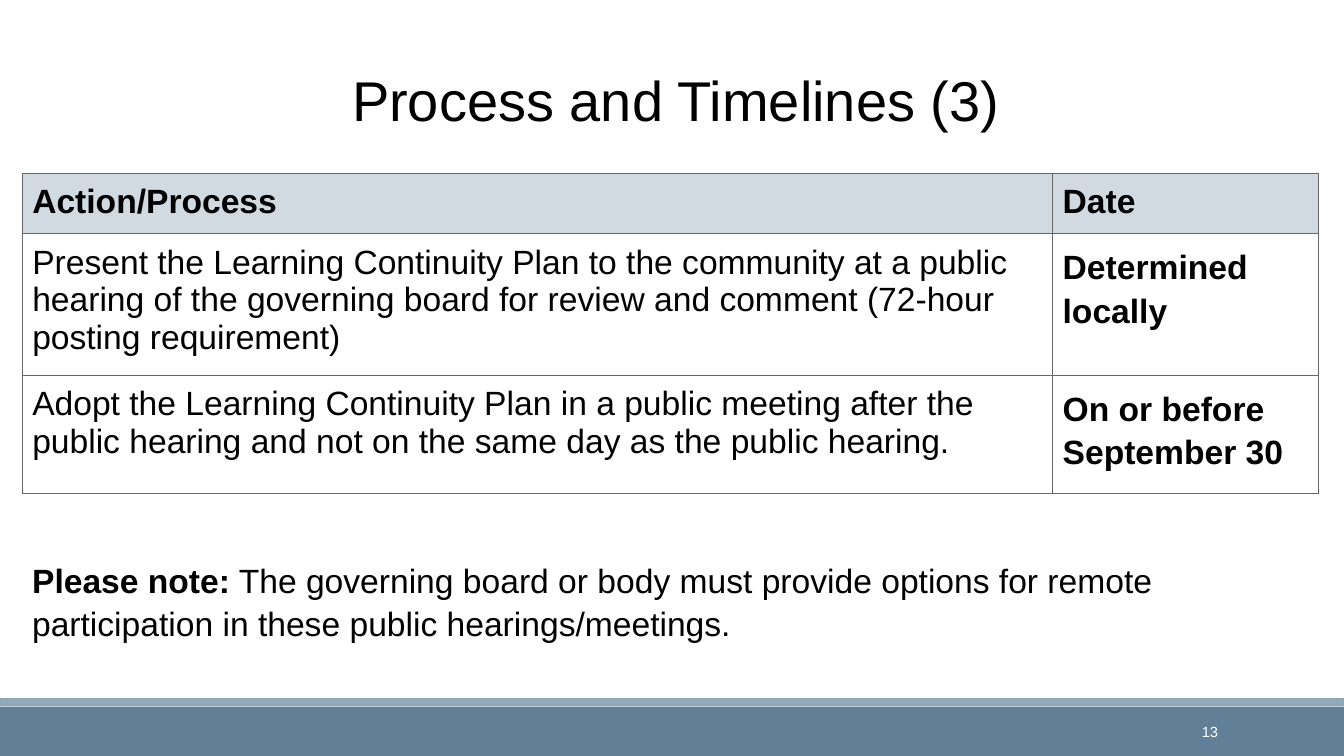
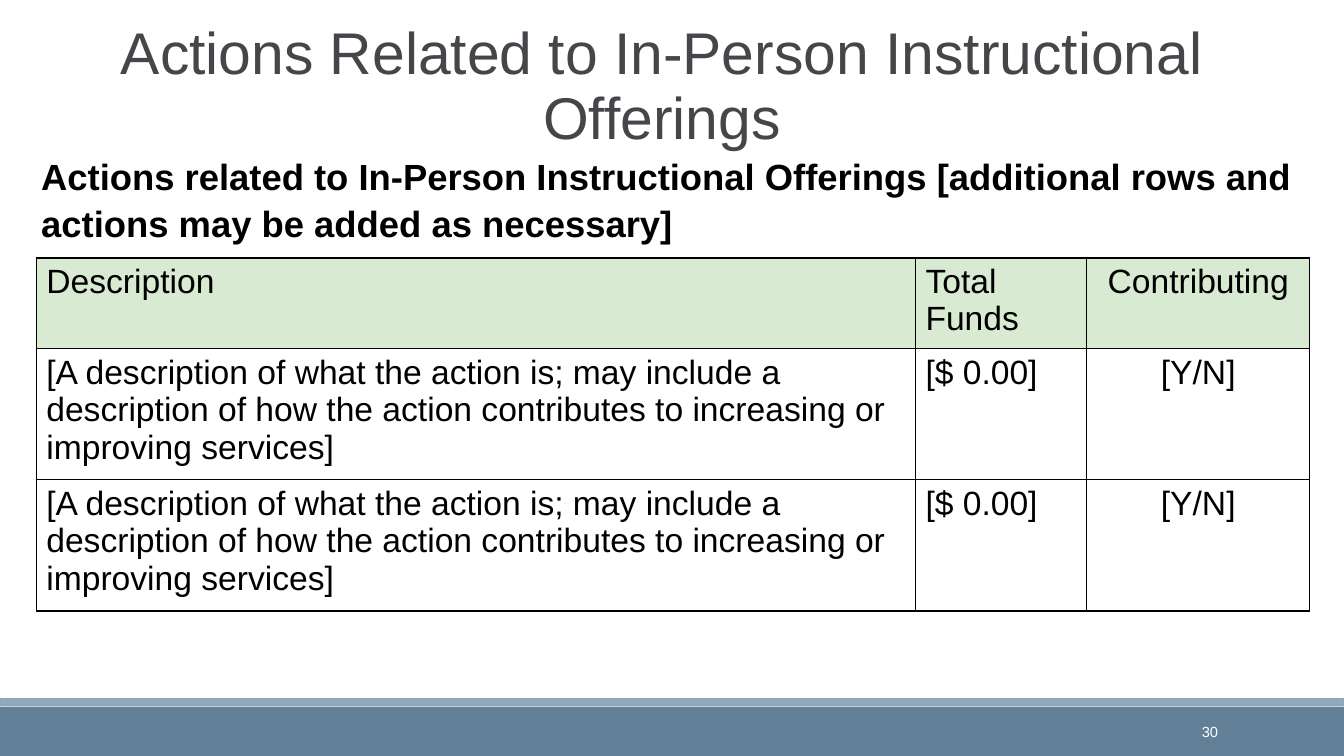
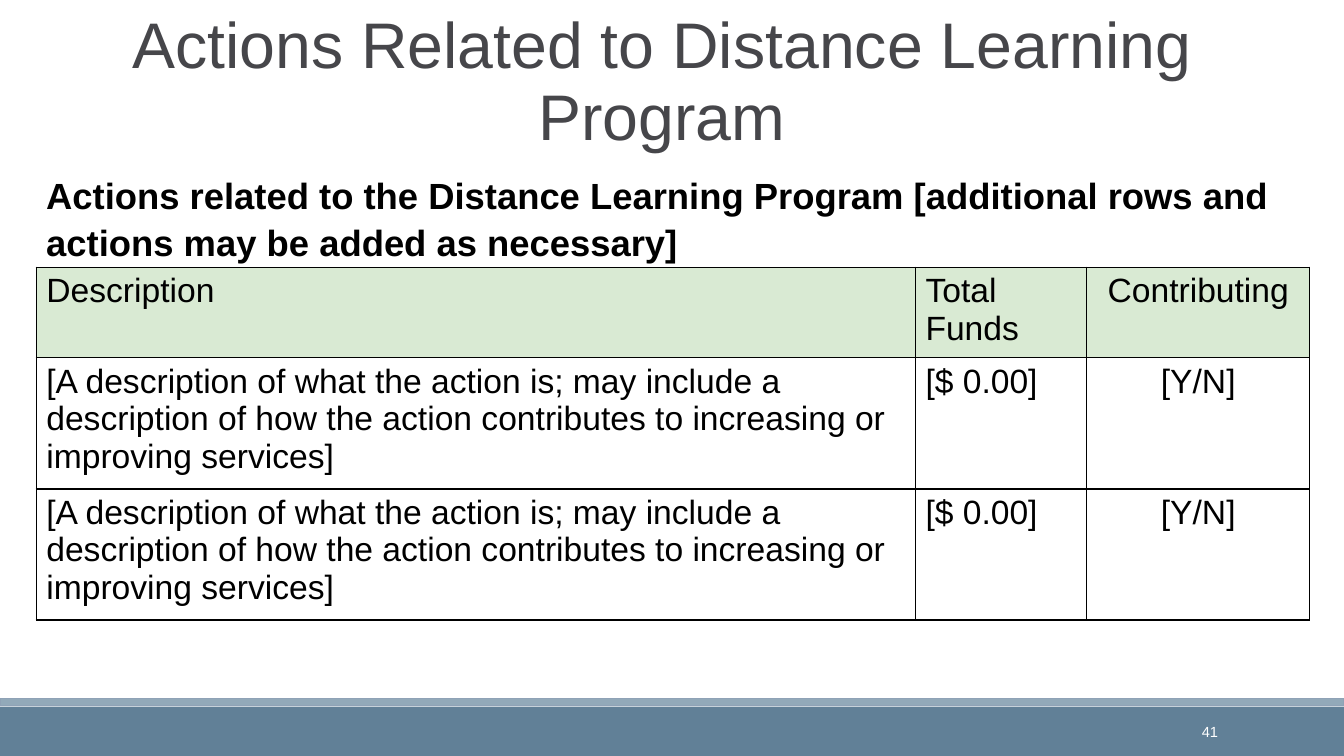
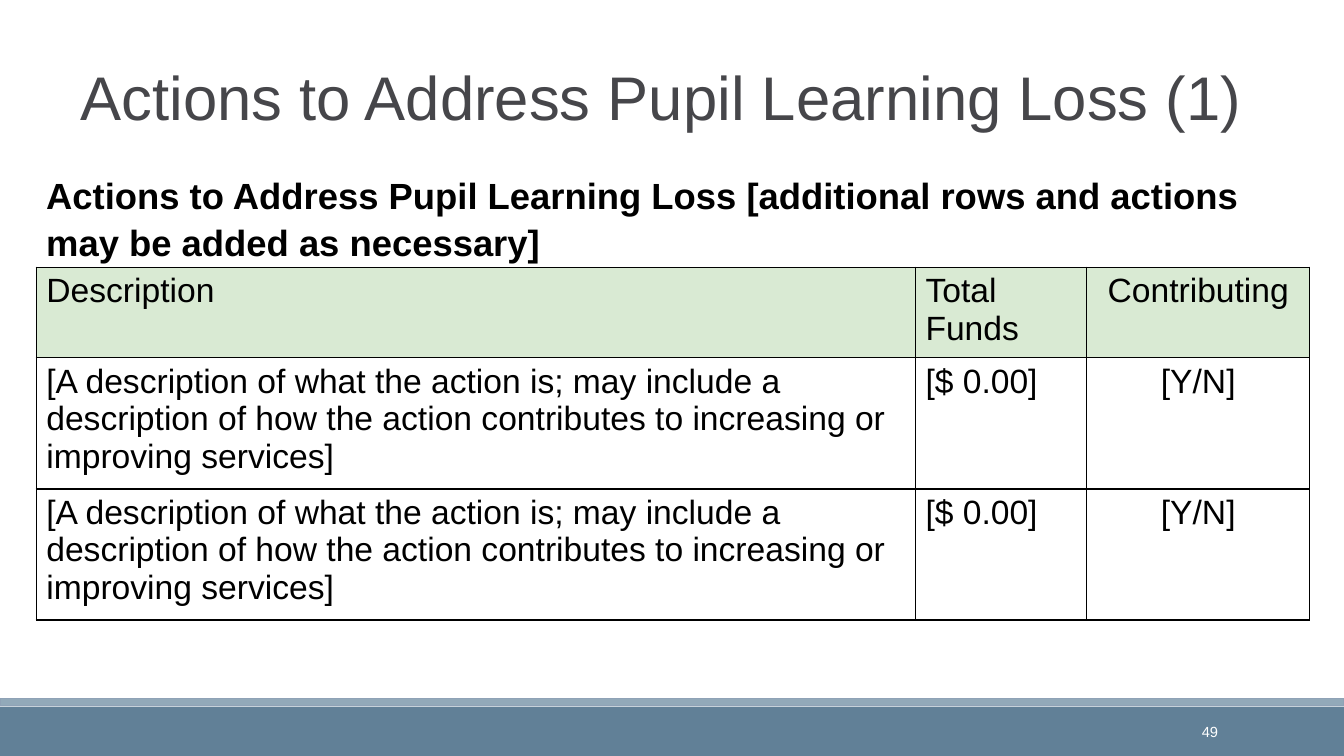
from lxml import etree
from pptx import Presentation
from pptx.dml.color import RGBColor
from pptx.enum import shapes, text
from pptx.oxml import ns
from pptx.util import Inches, Pt

BLACK = RGBColor(0x00, 0x00, 0x00)
WHITE = RGBColor(0xFF, 0xFF, 0xFF)
CHARCOAL = RGBColor(0x46, 0x46, 0x4A)
GREY = RGBColor(0x66, 0x66, 0x66)
SLATE = RGBColor(0x61, 0x80, 0x97)
PALE_SLATE = RGBColor(0x92, 0xA9, 0xB9)
BAND_LINE = RGBColor(0x8F, 0xA2, 0xB6)
HEADER_BLUE = RGBColor(0xD1, 0xD9, 0xE1)
HEADER_GREEN = RGBColor(0xD9, 0xEA, 0xD3)

LEFT, CENTER, RIGHT = text.PP_ALIGN.LEFT, text.PP_ALIGN.CENTER, text.PP_ALIGN.RIGHT
TOP, MIDDLE, BOTTOM = text.MSO_ANCHOR.TOP, text.MSO_ANCHOR.MIDDLE, text.MSO_ANCHOR.BOTTOM


def write(frame, runs, size, color=BLACK, align=LEFT, spacing=None):
    """Fill the first paragraph with (wording, bold) runs."""
    frame.word_wrap = True
    paragraph = frame.paragraphs[0]
    paragraph.alignment = align
    if spacing:
        paragraph.line_spacing = spacing
    for wording, bold in runs:
        run = paragraph.add_run()
        run.text = wording
        run.font.color.rgb = color
        formats = {"name": "Arial", "size": Pt(size), "bold": bold}
        for name, value in formats.items():
            setattr(run.font, name, value)


def add_text(slide, place, runs, size, anchor=TOP, inset=0.05, **style):
    shape = slide.shapes.add_textbox(*map(Inches, place))
    frame = shape.text_frame
    frame.vertical_anchor = anchor
    frame.margin_top = frame.margin_bottom = Inches(inset)
    write(frame, runs, size, **style)


# Table kinds
timeline_table = {
    "columns": [10.22, 2.64], "rows": [0.57, 1.31, 1.17],
    "header": HEADER_BLUE, "border": GREY, "border_width": 0.75, "inset": 0.1,
    "aligns": [LEFT, LEFT], "bold_header": True, "bold_columns": [1],
    "cells": [
        ["Action/Process", "Date"],
        ["Present the Learning Continuity Plan to the community at a public hearing of the "
         "governing board for review and comment (72-hour posting requirement)",
         "Determined locally"],
        ["Adopt the Learning Continuity Plan in a public meeting after the public hearing "
         "and not on the same day as the public hearing.",
         "On or before September 30"],
    ],
}
action_row = ["[A description of what the action is; may include a description of how the "
              "action contributes to increasing or improving services]", "[$ 0.00]", "[Y/N]"]
actions_table = {
    "columns": [8.72, 1.7, 2.21], "rows": [0.9, 1.3, 1.3],
    "header": HEADER_GREEN, "border": BLACK, "border_width": 1, "inset": 0.05,
    "aligns": [LEFT, LEFT, CENTER], "bold_header": False, "bold_columns": [],
    "cells": [["Description", "Total Funds", "Contributing"], action_row, action_row],
}

# Slide contents
added_rows = " [additional rows and actions may be added as necessary]"
pages = [
    {"number": "13", "title": "Process and Timelines (3)", "title_size": 40,
     "title_color": BLACK, "title_place": (0.31, 0.31, 12.78, 1.07),
     "body": [("Please note:", True),
              (" The governing board or body must provide options for remote participation "
               "in these public hearings/meetings.", False)],
     "body_size": 24, "body_inset": 0.1, "body_place": (0.22, 5.42, 12.78, 1.07),
     "table": timeline_table, "table_at": (0.22, 1.72)},
]
for number, title, size, height, lead, body_left, body_top, table_top in [
    ("30", "Actions Related to In-Person Instructional Offerings", 42, 1.25,
     "Actions related to In-Person Instructional Offerings", 0.31, 1.44, 2.56),
    ("41", "Actions Related to Distance Learning Program", 46, 1.27,
     "Actions related to the Distance Learning Program", 0.36, 1.63, 2.65),
    ("49", "Actions to Address Pupil Learning Loss (1)", 44, 1.07,
     "Actions to Address Pupil Learning Loss", 0.36, 1.63, 2.65),
]:
    pages.append({
        "number": number, "title": title, "title_size": size,
        "title_color": CHARCOAL, "title_place": (0.31, 0.31, 12.51, height),
        "body": [(lead + added_rows, True)],
        "body_size": 26, "body_inset": 0.05, "body_place": (body_left, body_top, 12.78, 0.98),
        "table": actions_table, "table_at": (0.36, table_top)})

presentation = Presentation()
presentation.slide_width, presentation.slide_height = Inches(13.33), Inches(7.5)

for page in pages:
    slide = presentation.slides.add_slide(presentation.slide_layouts[6])

    # Footer bands
    for top, height, fill, line in [(7.01, 0.49, SLATE, None),
                                    (6.93, 0.07, PALE_SLATE, BAND_LINE)]:
        band = slide.shapes.add_shape(shapes.MSO_SHAPE.RECTANGLE, 0, Inches(top),
                                      presentation.slide_width, Inches(height))
        band.shadow.inherit = False
        band.fill.solid()
        band.fill.fore_color.rgb = fill
        if line:
            band.line.color.rgb = line
            band.line.width = Pt(1.25)
        else:
            band.line.fill.background()

    # Title, body text and slide number
    add_text(slide, page["title_place"], [(page["title"], False)], page["title_size"],
             anchor=BOTTOM, color=page["title_color"], align=CENTER, spacing=0.92)
    add_text(slide, page["body_place"], page["body"], page["body_size"],
             inset=page["body_inset"], spacing=1.08)
    add_text(slide, (10.75, 7.06, 1.43, 0.4), [(page["number"], False)], 10.5,
             anchor=MIDDLE, color=WHITE, align=RIGHT)

    # Table
    kind = page["table"]
    left, top = page["table_at"]
    table = slide.shapes.add_table(
        len(kind["rows"]), len(kind["columns"]), Inches(left), Inches(top),
        Inches(sum(kind["columns"])), Inches(sum(kind["rows"]))).table
    table.horz_banding = False
    for column, width in zip(table.columns, kind["columns"]):
        column.width = Inches(width)
    for row_index, (row, height) in enumerate(zip(table.rows, kind["rows"])):
        row.height = Inches(height)
        for column_index, cell in enumerate(row.cells):
            is_header = row_index == 0
            bold_body = not is_header and column_index in kind["bold_columns"]
            cell.margin_top = cell.margin_bottom = Inches(kind["inset"])
            write(cell.text_frame,
                  [(kind["cells"][row_index][column_index],
                    bold_body or is_header and kind["bold_header"])],
                  24, align=kind["aligns"][column_index],
                  spacing=1.15 if bold_body else None)
            # Borders come before the fill in the cell properties
            properties = cell._tc.get_or_add_tcPr()
            for side in ("a:lnL", "a:lnR", "a:lnT", "a:lnB"):
                border = etree.SubElement(properties, ns.qn(side),
                                          w=str(Pt(kind["border_width"])))
                solid = etree.SubElement(border, ns.qn("a:solidFill"))
                etree.SubElement(solid, ns.qn("a:srgbClr"), val=str(kind["border"]))
            if is_header:
                cell.fill.solid()
                cell.fill.fore_color.rgb = kind["header"]
            else:
                cell.fill.background()

presentation.save("out.pptx")
